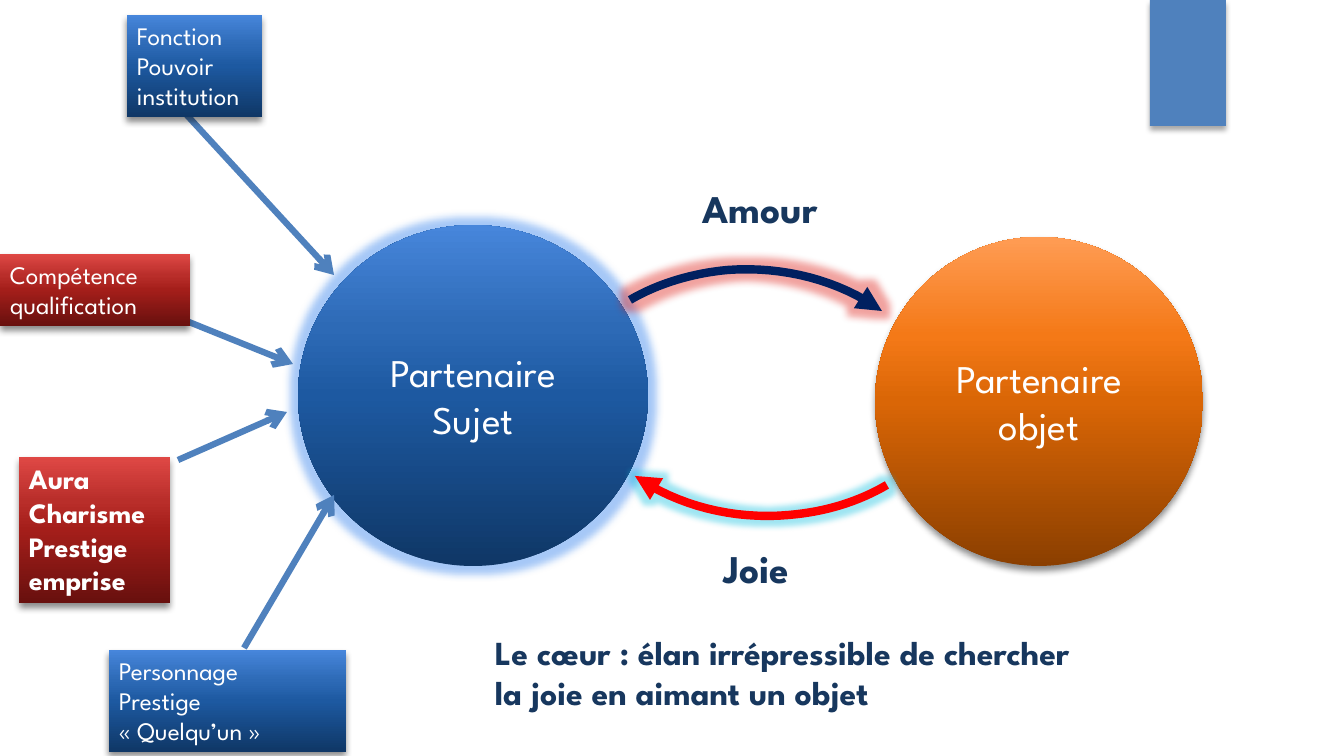
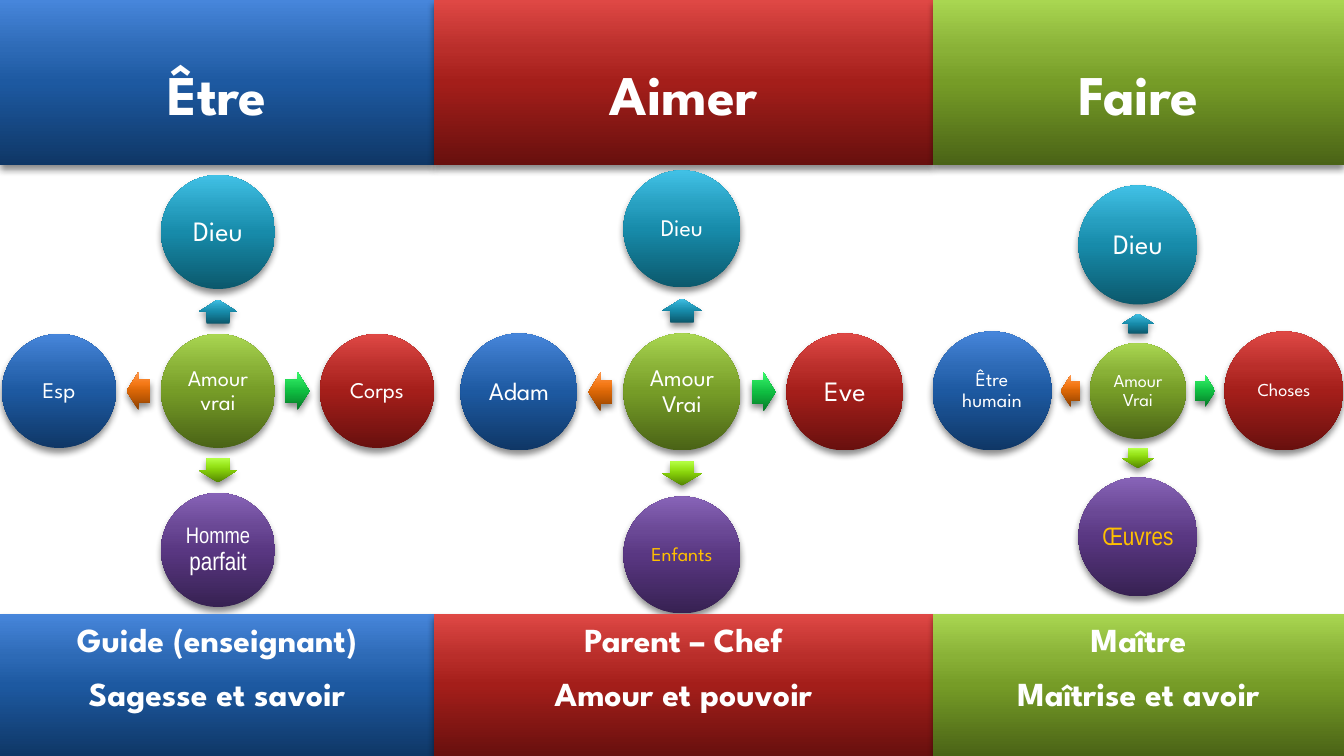
from lxml.etree import SubElement
from pptx import Presentation
from pptx.dml.color import RGBColor
from pptx.enum.shapes import MSO_CONNECTOR, MSO_SHAPE
from pptx.enum.text import MSO_ANCHOR, PP_ALIGN
from pptx.oxml.ns import qn
from pptx.util import Pt

# Scale, fonts and colours
PX = 12192000 / 1344
WIDTH, HEIGHT = 1344, 756
MAIN_FONT, NARROW_FONT = "League Spartan", "Arial Narrow"

WHITE = RGBColor(0xFF, 0xFF, 0xFF)
BLACK = RGBColor(0, 0, 0)
STEEL = RGBColor(0x4F, 0x81, 0xBD)
NAVY = RGBColor(0x17, 0x37, 0x5E)
MIDNIGHT = RGBColor(0x00, 0x20, 0x60)
PURE_RED = RGBColor(0xFF, 0, 0)
GOLD = RGBColor(0xFF, 0xC0, 0)
BLUE_GLOW = RGBColor(0x21, 0x76, 0xEB)
RED_GLOW = RGBColor(0xDE, 0x19, 0x11)
CYAN_GLOW = RGBColor(0x11, 0xC0, 0xE0)

# Gradients run from the bottom up, with stops at these positions
STOPS = (0, 50, 70, 100)


def gradient_colours(*codes):
    return tuple(RGBColor.from_string(code) for code in codes)


BLUE = gradient_colours("0F3766", "1D59A1", "2D6AB6", "4786DB")
RED = gradient_colours("68100E", "A41E1A", "B92E2A", "DF4845")
GREEN = gradient_colours("4A6316", "769C27", "89B137", "A9D651")
ORANGE = gradient_colours("8B3F00", "DA6606", "F47917", "FF9C54")
TEAL = gradient_colours("0B586C", "178BAA", "279FC0", "41C1E6")
PURPLE = gradient_colours("372152", "593782", "6A4895", "8763B7")
EMERALD = gradient_colours("067827", "0FBD41", "20D453", "39FD6C")
LIME = gradient_colours("538302", "84CD09", "98E51A", "B5FF46")

# Slide 1 content
CORNER_TAB = (1150, 0, 76, 126)
PARTNERS = [
    (["Partenaire", "Sujet"], (298, 225, 350, 341), BLUE, (BLUE_GLOW, 11)),
    (["Partenaire", "objet"], (875, 237, 328, 329), ORANGE, None),
]
# Each exchange: its curve as two cubic pieces, colour and glow
EXCHANGES = [
    ([(630, 300), (659, 283), (694, 273), (728, 270), (783, 266), (839, 280), (882, 311)],
     MIDNIGHT, (RED_GLOW, 11)),
    ([(887, 485), (858, 502), (825, 512), (789, 515), (734, 520), (678, 506), (635, 476)],
     PURE_RED, (CYAN_GLOW, 8)),
]
INFLUENCES = [
    ((184, 112), (334, 275)),
    ((184, 320), (293, 364)),
    ((178, 460), (287, 412)),
    ((244, 648), (334, 495)),
]
SOURCES = [
    (["Fonction", "Pouvoir", "institution"], (127, 15, 135, 102), BLUE, 18, False),
    (["Compétence", "qualification"], (0, 254, 190, 72), RED, 18, False),
    (["Aura", "Charisme", "Prestige", "emprise"], (19, 457, 151, 146), RED, 20, True),
    (["Personnage", "Prestige", "« Quelqu’un »"], (109, 650, 237, 102), BLUE, 18, False),
]
CAPTIONS = [
    ("Amour", (686, 179, 148, 57), 28, PP_ALIGN.CENTER, False),
    ("Joie", (706, 539, 100, 57), 28, PP_ALIGN.CENTER, False),
    ("Le cœur : élan irrépressible de chercher la joie en aimant un objet",
     (485, 627, 617, 92), 24, PP_ALIGN.LEFT, True),
]

# Slide 2 content
HEADER_HEIGHT, FOOTER_TOP = 165, 614
# Title, footer lines, width and gradient of each column
COLUMNS = [
    ("Être", ["Guide (enseignant)", "Sagesse et savoir"], 434, BLUE),
    ("Aimer", ["Parent – Chef", "Amour et pouvoir"], 499, RED),
    ("Faire", ["Maître", "Maîtrise et avoir"], 411, GREEN),
]
# Direction of each position, circle gradient, arrow preset and gradient
POSITIONS = {
    "core": ((0, 0), GREEN, None, None),
    "up": ((0, -1), TEAL, MSO_SHAPE.UP_ARROW, TEAL),
    "right": ((1, 0), RED, MSO_SHAPE.RIGHT_ARROW, EMERALD),
    "down": ((0, 1), PURPLE, MSO_SHAPE.DOWN_ARROW, LIME),
    "left": ((-1, 0), BLUE, MSO_SHAPE.LEFT_ARROW, ORANGE),
}
# Labels: lists of runs (text, size), then optional font values
DIAGRAMS = [
    dict(centre=(218, 391), outer=114, core=114, step=159, arrow=(24, 38), labels={
        "core": ([("Amour vrai", 16)], {}),
        "up": ([("Dieu", 20)], {}),
        "right": ([("Corps", 16)], {}),
        "down": ([("Homme ", 16), ("parfait", 18)], {"name": NARROW_FONT}),
        "left": ([("Esp", 16)], {}),
    }),
    dict(centre=(682, 392), outer=117, core=117, step=163, arrow=(24, 39), labels={
        "core": ([("Amour Vrai", 17)], {}),
        "up": ([("Dieu", 17)], {}),
        "right": ([("Eve", 20)], {}),
        "down": ([("Enfants", 14)], {"colour": GOLD}),
        "left": ([("Adam", 18)], {}),
    }),
    dict(centre=(1138, 391), outer=119, core=96, step=146, arrow=(20, 32), labels={
        "core": ([("Amour Vrai", 13)], {}),
        "up": ([("Dieu", 20)], {}),
        "right": ([("Choses", 13)], {}),
        "down": ([("Œuvres", 18)], {"name": NARROW_FONT, "colour": GOLD}),
        "left": ([("Être humain", 14)], {}),
    }),
]


# Shared helpers
def px(*lengths):
    return [round(length * PX) for length in lengths]


def assign(target, values):
    for attribute, value in values.items():
        setattr(target, attribute, value)


def add_colour(parent, colour, alpha=None):
    node = SubElement(parent, qn("a:srgbClr"), val=str(colour))
    if alpha is not None:
        SubElement(node, qn("a:alpha"), val=str(alpha * 1000))


def set_effect(shape, glow=None, shadow=None):
    shape.shadow.inherit = False
    effects = shape.element.spPr.find(qn("a:effectLst"))
    if glow:
        colour, radius = glow
        node = SubElement(effects, qn("a:glow"), rad=str(Pt(radius)))
        add_colour(node, colour, 40)
    elif shadow:
        alpha, blur, distance = shadow
        node = SubElement(effects, qn("a:outerShdw"), blurRad=str(Pt(blur)),
                          dist=str(Pt(distance)), dir="5400000", rotWithShape="0")
        add_colour(node, BLACK, alpha)


def add_block(shapes, preset, box, colours, glow=None):
    block = shapes.add_shape(preset, *px(*box))
    block.fill.gradient()
    block.fill.gradient_angle = 90
    stops = block.element.spPr.find(".//" + qn("a:gsLst"))
    stops.clear()
    for position, colour in zip(STOPS, colours):
        add_colour(SubElement(stops, qn("a:gs"), pos=str(position * 1000)), colour)
    block.line.fill.background()
    set_effect(block, glow, (45, 5, 3))
    return block


def write(shape, paragraphs, align=PP_ALIGN.CENTER, frame=None, spacing=None,
          colour=WHITE, name=MAIN_FONT, bold=False):
    """Fill a shape with paragraphs, each a list of (text, size) runs."""
    text_frame = shape.text_frame
    assign(text_frame, {"word_wrap": True, "vertical_anchor": MSO_ANCHOR.TOP, **(frame or {})})
    for index, runs in enumerate(paragraphs):
        paragraph = text_frame.add_paragraph() if index else text_frame.paragraphs[0]
        paragraph.alignment = align
        if index:
            assign(paragraph, spacing or {})
        for text, size in runs:
            run = paragraph.add_run()
            run.text = text
            assign(run.font, {"name": name, "size": Pt(size), "bold": bold})
            run.font.color.rgb = colour


def style_arrow(arrow, colour, width, head):
    arrow.line.color.rgb = colour
    arrow.line.width = Pt(width)
    SubElement(arrow.element.spPr.find(qn("a:ln")), qn("a:tailEnd"), type=head)


def curve_points(controls, pieces=16):
    """Points along joined cubic curves that share their end points."""
    points = [controls[0]]
    for first in range(0, len(controls) - 1, 3):
        quad = controls[first:first + 4]
        for part in range(1, pieces + 1):
            t = part / pieces
            weights = ((1 - t) ** 3, 3 * t * (1 - t) ** 2, 3 * t * t * (1 - t), t ** 3)
            points.append(tuple(sum(w * p[axis] for w, p in zip(weights, quad))
                                for axis in (0, 1)))
    return points


def add_corner_tab(slide, layout):
    """Put the corner tab on the layout, behind every slide."""
    tab = slide.shapes.add_shape(MSO_SHAPE.RECTANGLE, *px(*CORNER_TAB))
    tab.fill.solid()
    tab.fill.fore_color.rgb = STEEL
    tab.line.fill.background()
    set_effect(tab, shadow=(35, 4, 3))
    layout.shapes.element.append(tab.element)


# Slide 1: two partners and what acts on the subject
def build_partners(slide):
    shapes = slide.shapes
    for lines, box, colours, glow in PARTNERS:
        circle = add_block(shapes, MSO_SHAPE.OVAL, box, colours, glow)
        write(circle, [[(line, 28)] for line in lines],
              frame={"vertical_anchor": MSO_ANCHOR.MIDDLE})

    for controls, colour, glow in EXCHANGES:
        start, *others = [px(*point) for point in curve_points(controls)]
        builder = shapes.build_freeform(*start)
        builder.add_line_segments(others, close=False)
        exchange = builder.convert_to_shape()
        exchange.fill.background()
        style_arrow(exchange, colour, 6, "triangle")
        set_effect(exchange, glow)

    for start, end in INFLUENCES:
        influence = shapes.add_connector(MSO_CONNECTOR.STRAIGHT, *px(*start, *end))
        style_arrow(influence, STEEL, 4.5, "arrow")
        SubElement(influence.element.spPr, qn("a:effectLst"))

    for lines, box, colours, size, bold in SOURCES:
        source = add_block(shapes, MSO_SHAPE.RECTANGLE, box, colours)
        write(source, [[(line, size)] for line in lines], PP_ALIGN.LEFT,
              {"word_wrap": False}, bold=bold)

    for text, box, size, align, wrap in CAPTIONS:
        write(shapes.add_textbox(*px(*box)), [[(text, size)]], align,
              {"word_wrap": wrap}, colour=NAVY, bold=True)


# Slide 2: three columns, each with a four-position diagram
def centred(x, y, width, height):
    return x - width / 2, y - height / 2, width, height


def add_diagram(slide, centre, outer, core, step, arrow, labels):
    shapes = slide.shapes.add_group_shape().shapes
    inset = px(2)[0]
    frame = {"vertical_anchor": MSO_ANCHOR.MIDDLE, "margin_left": inset,
             "margin_right": inset, "margin_top": inset, "margin_bottom": inset}
    gap_middle = (core / 2 + step - outer / 2) / 2
    for position, ((dx, dy), colours, preset, arrow_colours) in POSITIONS.items():
        x, y = centre
        if preset:
            size = arrow if dx else arrow[::-1]
            box = centred(x + dx * gap_middle, y + dy * gap_middle, *size)
            pointer = add_block(shapes, preset, box, arrow_colours)
            pointer.adjustments[0], pointer.adjustments[1] = 0.6, 0.5
        diameter = outer if preset else core
        box = centred(x + dx * step, y + dy * step, diameter, diameter)
        circle = add_block(shapes, MSO_SHAPE.OVAL, box, colours)
        runs, font = labels[position]
        write(circle, [runs], frame=frame, **font)
        circle.text_frame.paragraphs[0].line_spacing = 0.9


def build_columns(slide):
    lefts = [sum(column[2] for column in COLUMNS[:i]) for i in range(len(COLUMNS))]
    for left, (title, _, width, colours) in zip(lefts, COLUMNS):
        header = add_block(slide.shapes, MSO_SHAPE.RECTANGLE,
                           (left, 0, width, HEADER_HEIGHT), colours)
        write(header, [[(title, 40)]], frame={"margin_top": px(60)[0]}, bold=True)
    for diagram in DIAGRAMS:
        add_diagram(slide, **diagram)
    for left, (_, lines, width, colours) in zip(lefts, COLUMNS):
        footer = add_block(slide.shapes, MSO_SHAPE.RECTANGLE,
                           (left, FOOTER_TOP, width, HEIGHT - FOOTER_TOP), colours)
        write(footer, [[(line, 24)] for line in lines],
              spacing={"space_before": Pt(10)}, bold=True)


def main():
    deck = Presentation()
    deck.slide_width, deck.slide_height = px(WIDTH, HEIGHT)
    blank = deck.slide_layouts[6]
    partners, columns = (deck.slides.add_slide(blank) for _ in range(2))
    add_corner_tab(partners, blank)
    build_partners(partners)
    build_columns(columns)
    deck.save("out.pptx")


if __name__ == "__main__":
    main()
